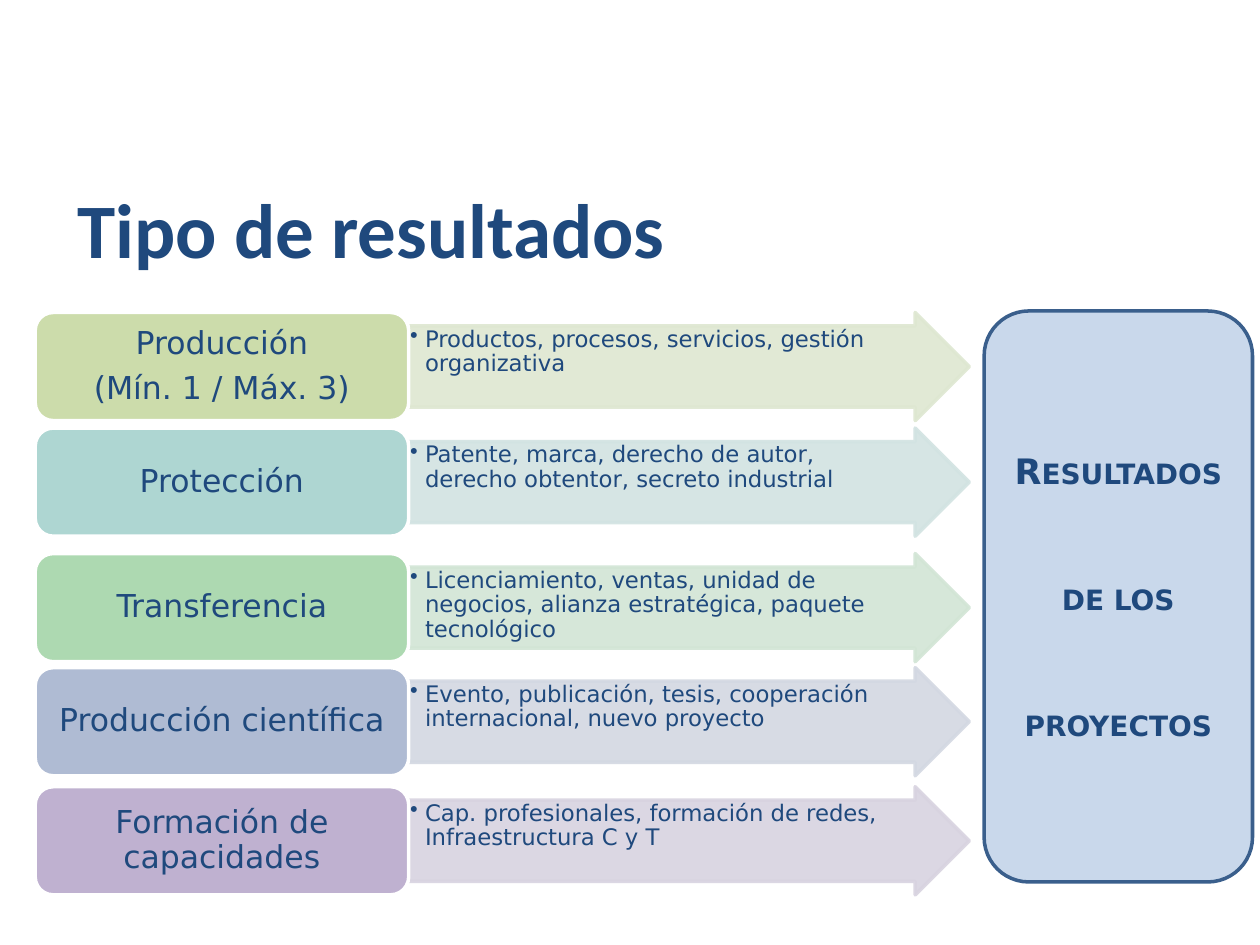
from lxml import etree
from pptx import Presentation
from pptx.dml.color import RGBColor
from pptx.enum.shapes import MSO_SHAPE
from pptx.enum.text import MSO_ANCHOR, MSO_AUTO_SIZE, PP_ALIGN
from pptx.oxml.ns import qn
from pptx.util import Cm, Pt

ARROW, ROUNDED = MSO_SHAPE.RIGHT_ARROW, MSO_SHAPE.ROUNDED_RECTANGLE
TOP, MIDDLE = MSO_ANCHOR.TOP, MSO_ANCHOR.MIDDLE
LEFT, CENTER = PP_ALIGN.LEFT, PP_ALIGN.CENTER
NAVY, WHITE = "1F497D", "FFFFFF"

TITLE = "Tipo de resultados"
RESULT_TYPES = [
    (6.3, ["Producción", "(Mín. 1 / Máx. 3)"], "9BBB59",
     "Productos, procesos, servicios, gestión organizativa", "DEE7D1"),
    (8.63, ["Protección"], "5EAFA6",
     "Patente, marca, derecho de autor, derecho obtentor, secreto industrial", "D2E3E2"),
    (11.16, ["Transferencia"], "5CB565",
     "Licenciamiento, ventas, unidad de negocios, alianza estratégica, paquete tecnológico",
     "D2E5D5"),
    (13.46, ["Producción científica"], "6179A8",
     "Evento, publicación, tesis, cooperación internacional, nuevo proyecto", "D3D8E2"),
    (15.86, ["Formación de capacidades"], "8064A2",
     "Cap. profesionales, formación de redes, Infraestructura C y T", "D8D3E0"),
]
SUMMARY = ["Resultados", "de los", "proyectos"]

LABEL_LEFT, LABEL_WIDTH = 0.71, 7.53
ARROW_LEFT, ARROW_WIDTH = LABEL_LEFT + LABEL_WIDTH, 11.3
ROW_HEIGHT = 2.18

TITLE_FONT = {"name": "Calibri", "size": Pt(44), "bold": True}
LABEL_FONT = {"name": "DejaVu Sans", "size": Pt(18)}
DETAIL_FONT = {"name": "DejaVu Sans", "size": Pt(13)}
SUMMARY_FONT = {"name": "DejaVu Sans", "size": Pt(20), "bold": True}
LABEL_PARAGRAPH = {"alignment": CENTER, "line_spacing": 0.9}
DETAIL_PARAGRAPH = {"alignment": LEFT, "line_spacing": 0.9}
SUMMARY_PARAGRAPH = {"alignment": CENTER}


def apply(target, values):
    for key, value in values.items():
        setattr(target, key, value)


def color(target, hex_code):
    target.rgb = RGBColor.from_string(hex_code)


def make_transparent(properties, route, alpha):
    rgb = properties.find("/".join(qn(tag) for tag in route + ["a:solidFill", "a:srgbClr"]))
    etree.SubElement(rgb, qn("a:alpha"), val=str(alpha * 1000))


def add_panel(slide, kind, box, fill, fill_alpha, outline, outline_alpha=100):
    panel = slide.shapes.add_shape(kind, *map(Cm, box))
    panel.shadow.inherit = False
    panel.fill.solid()
    color(panel.fill.fore_color, fill)
    panel.line.width = Pt(2)
    color(panel.line.color, outline)
    make_transparent(panel._element.spPr, [], fill_alpha)
    make_transparent(panel._element.spPr, ["a:ln"], outline_alpha)
    return panel


def add_bullet(paragraph):
    properties = paragraph._p.get_or_add_pPr()
    properties.set("marL", str(Cm(0.3)))
    properties.set("indent", str(Cm(-0.3)))
    etree.SubElement(properties, qn("a:buChar"), char="•")


def write(frame, lines, font, paragraph_format, anchor, margins=None, gap=0, bullet=False):
    frame.word_wrap = True
    frame.vertical_anchor = anchor
    if margins:
        sides = ("margin_left", "margin_top", "margin_right", "margin_bottom")
        apply(frame, dict(zip(sides, map(Cm, margins))))
    for index, line in enumerate(lines):
        paragraph = frame.add_paragraph() if index else frame.paragraphs[0]
        if bullet:
            add_bullet(paragraph)
        apply(paragraph, paragraph_format)
        if index:
            paragraph.space_before = Pt(gap)
        run = paragraph.add_run()
        run.text = line
        apply(run.font, font)
        color(run.font.color, NAVY)


def add_title(slide):
    title = slide.shapes.title
    apply(title, {"left": Cm(1.3), "top": Cm(3.53), "width": Cm(12.47), "height": Cm(2.13)})
    write(title.text_frame, [TITLE], TITLE_FONT, {"alignment": LEFT}, MIDDLE)
    apply(title.text_frame, {"word_wrap": False, "auto_size": MSO_AUTO_SIZE.NONE})


def add_result_type(slide, top, label_lines, label_fill, detail, arrow_fill):
    arrow = add_panel(slide, ARROW, (ARROW_LEFT, top, ARROW_WIDTH, ROW_HEIGHT),
                      arrow_fill, 90, arrow_fill, 90)
    arrow.adjustments[0] = 0.75
    write(arrow.text_frame, [detail], DETAIL_FONT, DETAIL_PARAGRAPH, TOP,
          margins=(0.03, 0.03, 0.56, 0.03), bullet=True)
    label = add_panel(slide, ROUNDED, (LABEL_LEFT, top, LABEL_WIDTH, ROW_HEIGHT),
                      label_fill, 50, WHITE)
    write(label.text_frame, label_lines, LABEL_FONT, LABEL_PARAGRAPH, MIDDLE,
          margins=(0.18, 0.1, 0.18, 0.1), gap=6.3)


def add_summary(slide):
    summary = add_panel(slide, ROUNDED, (19.84, 6.27, 5.41, 11.51), "4F81BD", 30, "3A5F8C")
    write(summary.text_frame, SUMMARY, SUMMARY_FONT, SUMMARY_PARAGRAPH, MIDDLE, gap=48)
    for paragraph in summary.text_frame.paragraphs:
        for run in paragraph.runs:
            run.font._element.set("cap", "small")


def main():
    deck = Presentation()
    apply(deck, {"slide_width": Cm(25.4), "slide_height": Cm(19.05)})
    slide = deck.slides.add_slide(deck.slide_layouts[5])
    add_title(slide)
    for result_type in RESULT_TYPES:
        add_result_type(slide, *result_type)
    add_summary(slide)
    deck.save("out.pptx")


if __name__ == "__main__":
    main()
